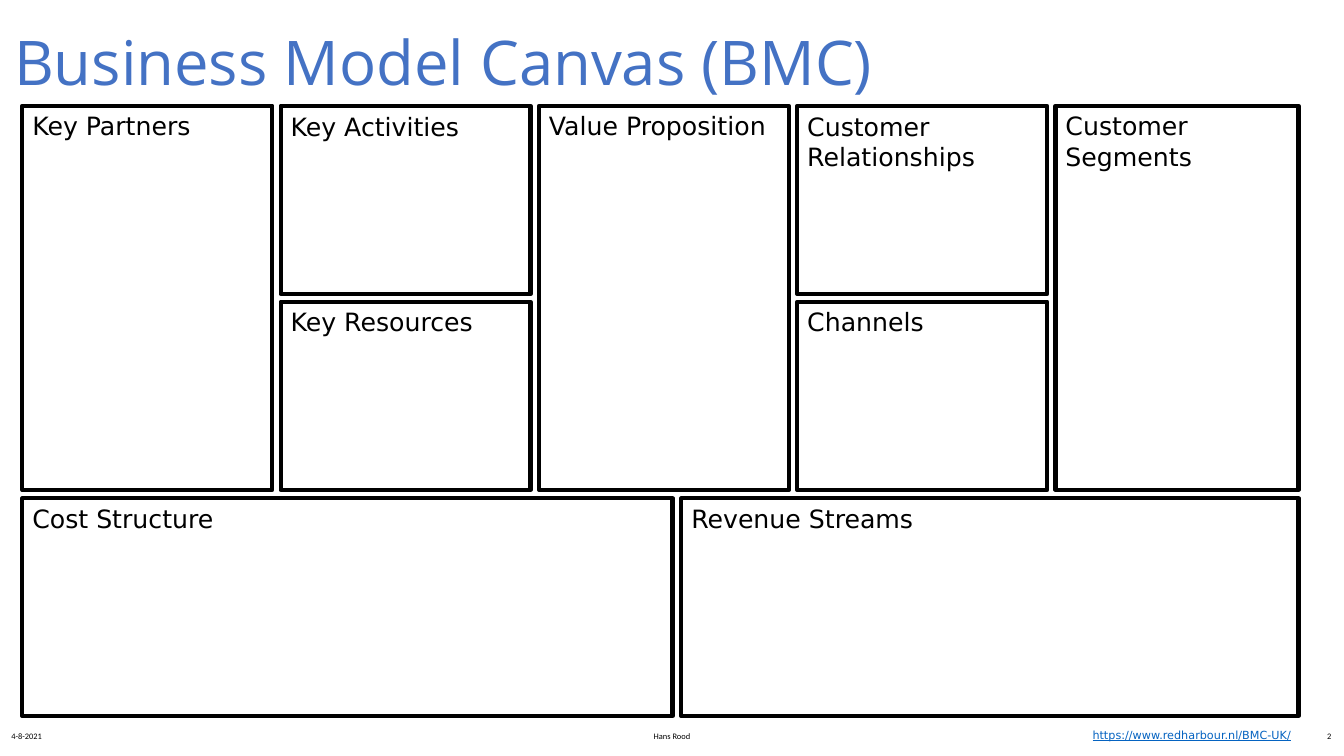
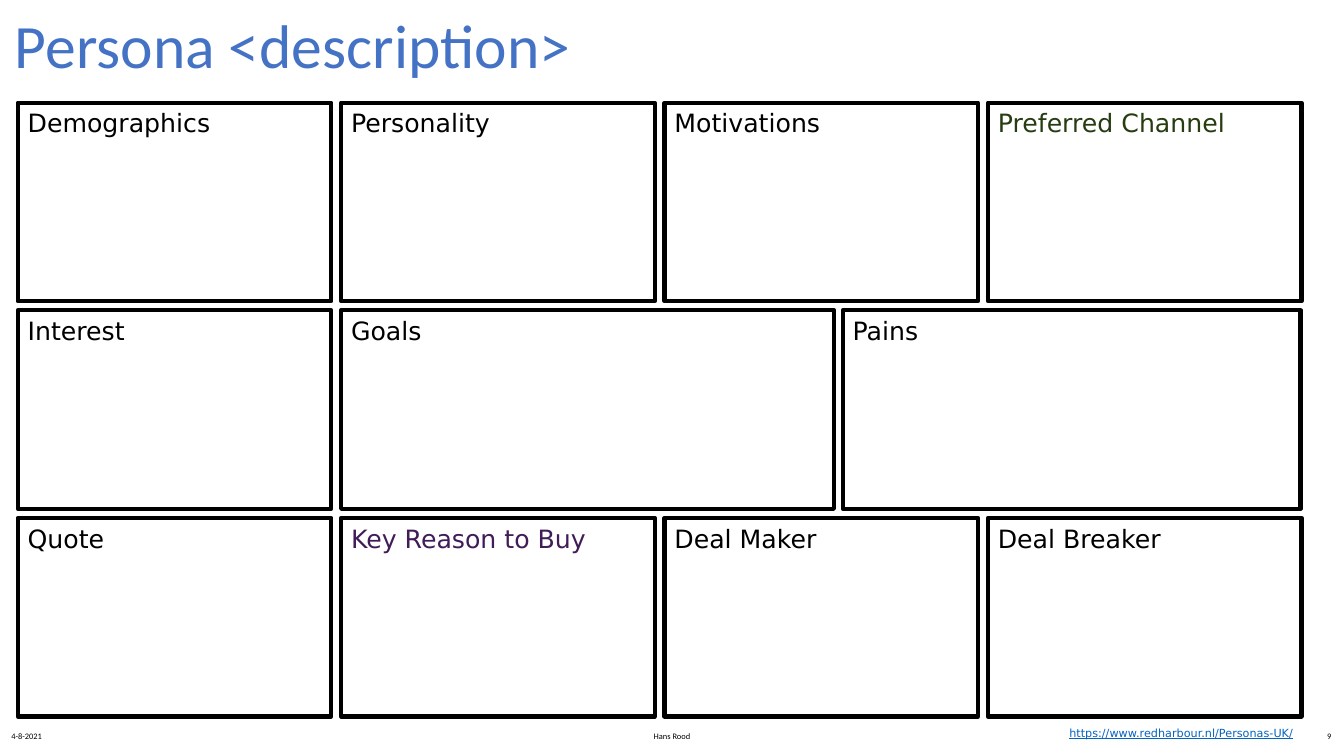
"""Build the business model canvas and the persona canvas."""
from dataclasses import dataclass

import pptx
import pptx.dml.color
import pptx.enum.shapes
import pptx.enum.text
import pptx.presentation
import pptx.shapes.base
import pptx.slide
import pptx.util

Pt = pptx.util.Pt
ALIGN = pptx.enum.text.PP_ALIGN
ANCHOR = pptx.enum.text.MSO_ANCHOR

BLACK, WHITE, BLUE, LINK = "000000", "FFFFFF", "4472C4", "0563C1"
GREEN, PURPLE = "273C10", "401C58"
SANS, BODY = "DejaVu Sans", "Calibri"


@dataclass(frozen=True)
class Area:
    left: float
    top: float
    width: float
    height: float

    def points(self) -> tuple[pptx.util.Length, ...]:
        return tuple(Pt(size) for size in (self.left, self.top, self.width, self.height))


@dataclass(frozen=True)
class Card:
    label: str
    area: Area
    color: str = BLACK


@dataclass(frozen=True)
class Page:
    title: str
    title_font: str
    title_area: Area
    cards: list[Card]
    link: str
    link_area: Area
    number: int


def ink(code: str) -> pptx.dml.color.RGBColor:
    return pptx.dml.color.RGBColor.from_string(code)


def write(shape: pptx.shapes.base.BaseShape, text: str, *, size: float, font: str = SANS,
          color: str = BLACK, align: ALIGN = ALIGN.LEFT, anchor: ANCHOR = ANCHOR.TOP,
          spacing: float = 1.0, underline: bool = False) -> None:
    frame = shape.text_frame
    frame.word_wrap = True
    frame.vertical_anchor = anchor
    line = frame.paragraphs[0]
    line.alignment = align
    line.line_spacing = spacing
    run = line.add_run()
    run.text = text
    run.font.size = Pt(size)
    run.font.name = font
    run.font.color.rgb = ink(color)
    run.font.underline = underline


def label(slide: pptx.slide.Slide, text: str, area: Area, **style) -> None:
    write(slide.shapes.add_textbox(*area.points()), text, **style)


def draw_card(slide: pptx.slide.Slide, card: Card) -> None:
    rect = pptx.enum.shapes.MSO_SHAPE.RECTANGLE
    box = slide.shapes.add_shape(rect, *card.area.points())
    box.shadow.inherit = False
    box.fill.solid()
    box.fill.fore_color.rgb = ink(WHITE)
    box.line.color.rgb = ink(BLACK)
    box.line.width = Pt(3)
    write(box, card.label, size=18, color=card.color)


def draw_foot(slide: pptx.slide.Slide, number: int) -> None:
    for text, left, width, align in (
        ("4-8-2021", 1, 216, ALIGN.LEFT),
        ("Hans Rood", 318, 324, ALIGN.CENTER),
        (str(number), 742, 216, ALIGN.RIGHT),
    ):
        label(slide, text, Area(left, 511.5, width, 29), size=6, font=BODY,
              align=align, anchor=ANCHOR.MIDDLE)


def draw_page(deck: pptx.presentation.Presentation, page: Page) -> None:
    slide = deck.slides.add_slide(deck.slide_layouts[6])
    draw_foot(slide, page.number)
    label(slide, page.title, page.title_area, size=44, font=page.title_font,
          color=BLUE, anchor=ANCHOR.MIDDLE, spacing=0.9)
    for card in page.cards:
        draw_card(slide, card)
    label(slide, page.link, page.link_area, size=8, color=LINK, underline=True)


def model_cards() -> list[Card]:
    left, top, step, width = 16, 75.6, 184.5, 178.5
    full, half, gap = 274.4, 134.5, 5.4
    right, base, depth = 927.5, 356, 155.5
    split = 486.7
    columns = (
        ("Key Partners",),
        ("Key Activities", "Key Resources"),
        ("Value Proposition",),
        ("Customer Relationships", "Channels"),
        ("Customer Segments",),
    )
    cards = []
    for col, names in enumerate(columns):
        start = left + col * step
        span = min(width, right - start)
        height = full if len(names) == 1 else half
        for row, name in enumerate(names):
            cards.append(Card(name, Area(start, top + row * (half + gap), span, height)))
    cards.append(Card("Cost Structure", Area(left, base, 464.4, depth)))
    cards.append(Card("Revenue Streams", Area(split, base, right - split, depth)))
    return cards


def persona_cards() -> list[Card]:
    left, top, step, rise = 12.7, 73.4, 231, 148.3
    width, height = 224, 141.8
    rows = (
        (("Demographics", BLACK), ("Personality", BLACK),
         ("Motivations", BLACK), ("Preferred Channel", GREEN)),
        (("Interest", BLACK),),
        (("Quote", BLACK), ("Key Reason to Buy", PURPLE),
         ("Deal Maker", BLACK), ("Deal Breaker", BLACK)),
    )
    cards = [
        Card(name, Area(left + col * step, top + row * rise, width, height), color)
        for row, names in enumerate(rows)
        for col, (name, color) in enumerate(names)
    ]
    cards.append(Card("Goals", Area(left + step, top + rise, 352, height)))
    cards.append(Card("Pains", Area(602, top + rise, 327, height)))
    return cards


def main() -> None:
    deck = pptx.Presentation()
    deck.slide_width, deck.slide_height = Pt(960), Pt(540)
    pages = (
        Page("Business Model Canvas (BMC)", "Open Sans", Area(3, 3.6, 692, 86.4),
             model_cards(), "https://www.redharbour.nl/BMC-UK/",
             Area(773.3, 517, 171.4, 17), 2),
        Page("Persona <description>", BODY, Area(3.6, 3.6, 846, 62.6),
             persona_cards(), "https://www.redharbour.nl/Personas-UK/",
             Area(756.7, 515.5, 188.6, 17), 9),
    )
    for page in pages:
        draw_page(deck, page)
    deck.save("out.pptx")


if __name__ == "__main__":
    main()
